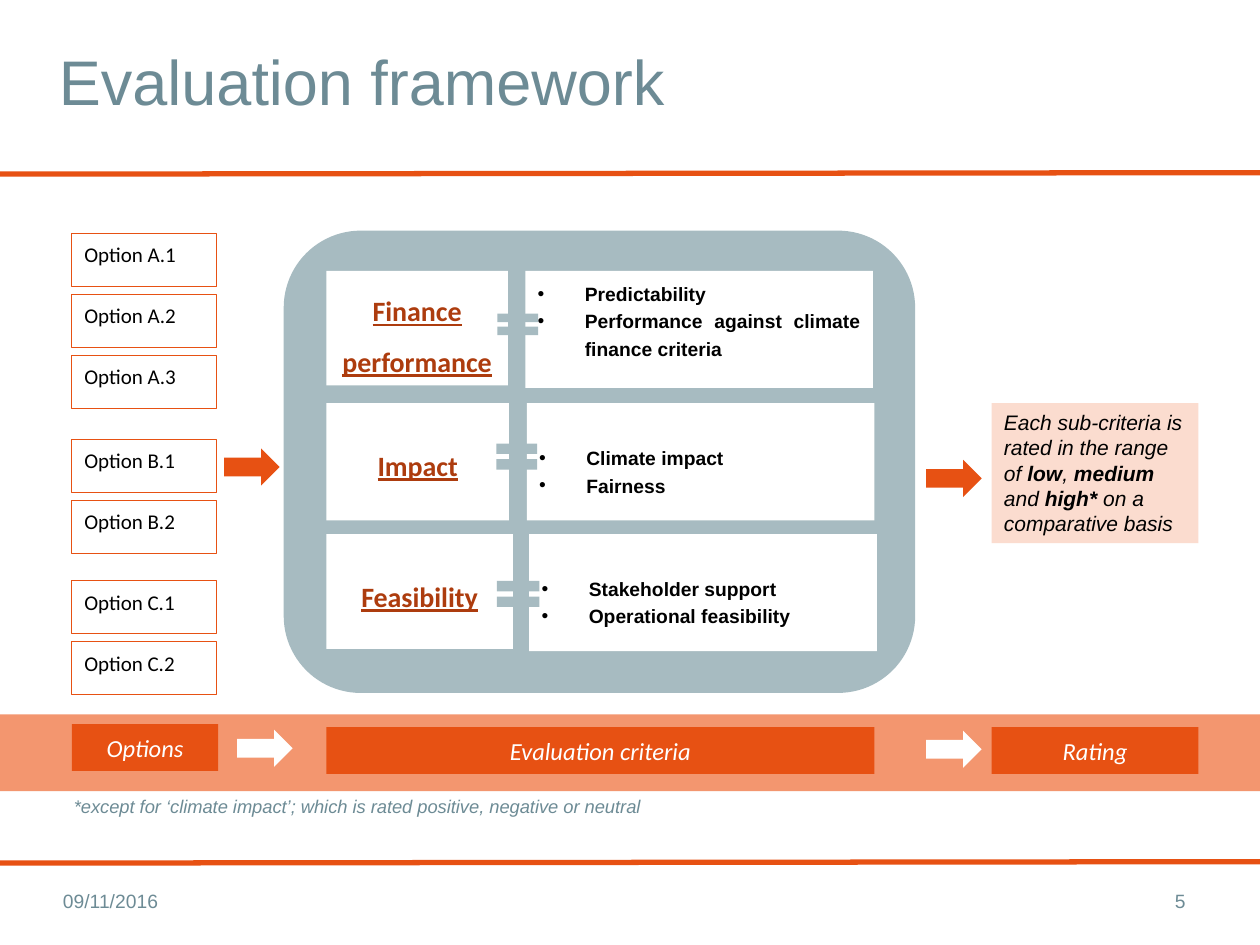
from dataclasses import dataclass
from lxml.etree import SubElement
from pptx import Presentation
from pptx.dml.color import RGBColor
from pptx.enum.shapes import MSO_CONNECTOR, MSO_SHAPE
from pptx.enum.text import MSO_ANCHOR, PP_ALIGN
from pptx.oxml.ns import qn
from pptx.util import Cm, Pt


@dataclass(frozen=True)
class Theme:
    orange: str = "E75113"
    light_orange: str = "F3966F"
    pale_orange: str = "FBDCCF"
    rust: str = "AD3C0E"
    slate: str = "6D8B95"
    panel: str = "A7BBC1"
    white: str = "FFFFFF"
    black: str = "000000"
    heading_font: str = "Arial"
    label_font: str = "Calibri"
    title_size: float = 36
    criterion_size: float = 16
    stage_size: float = 14
    body_size: float = 12
    small_size: float = 11
    note_size: float = 10.5


THEME = Theme()

# Content; all lengths are centimetres
TITLE = "Evaluation framework"
FOOTNOTE = "*except for ‘climate impact’; which is rated positive, negative or neutral"
DATE, PAGE = "09/11/2016", "5"
OPTION_GROUPS = [  # top, labels
    (4.7, ["Option A.1", "Option A.2", "Option A.3"]),
    (8.86, ["Option B.1", "Option B.2"]),
    (11.71, ["Option C.1", "Option C.2"]),
]
CRITERIA = [
    dict(name="Finance performance", spacing=1.5, name_inset=0.13, name_size=(3.66, 2.31),
         items=["Predictability", "Performance against climate finance criteria"],
         first_spacing=1.2, list_left=10.59, list_inset=0.13, top=5.46,
         equal=(9.88, 6.17, 1.12, 0.74)),
    dict(name="Impact", spacing=1.07, name_inset=0.86, name_size=(3.68, 2.36),
         items=["Climate impact", "Fairness"],
         first_spacing=1.5, list_left=10.62, list_inset=0.63, top=8.13,
         equal=(9.86, 8.76, 1.12, 0.89)),
    dict(name="Feasibility", spacing=1.07, name_inset=0.86, name_size=(3.76, 2.31),
         items=["Stakeholder support", "Operational feasibility"],
         first_spacing=1.5, list_left=10.67, list_inset=0.63, top=10.77,
         equal=(9.86, 11.53, 1.17, 0.89)),
]
RATING = [  # text, bold
    ("Each sub-criteria is rated in the range of ", False), ("low", True),
    (", ", False), ("medium ", True), ("and ", False), ("high*", True),
    (" on a comparative basis", False),
]
STAGES = [  # text, left, top, width
    ("Options", 1.45, 14.6, 2.95),
    ("Evaluation criteria", 6.58, 14.66, 11.05),
    ("Rating", 19.99, 14.66, 4.17),
]
FLOW_ARROWS = [(4.52, 9.04), (18.67, 9.27)]
STAGE_ARROWS = [(4.78, 14.71), (18.67, 14.73)]
RULES = [(3.51, 3.48), (17.4, 17.37)]  # left and right height
OPTION_LEFT, OPTION_WIDTH, OPTION_HEIGHT, OPTION_PITCH = 1.45, 2.92, 1.07, 1.23

presentation = Presentation()
presentation.slide_width, presentation.slide_height = Cm(25.4), Cm(19.05)
slide = presentation.slides.add_slide(presentation.slide_layouts[6])


def color(value):
    return RGBColor.from_string(value)


def add_box(kind, left, top, width, height, fill, outline=None):
    shape = slide.shapes.add_shape(kind, Cm(left), Cm(top), Cm(width), Cm(height))
    shape.shadow.inherit = False
    shape.fill.solid()
    shape.fill.fore_color.rgb = color(fill)
    if outline:
        shape.line.color.rgb = color(outline)
        shape.line.width = Pt(0.5)
    else:
        shape.line.fill.background()
    return shape


def prepare_frame(shape, anchor=MSO_ANCHOR.TOP, inset=0.13):
    frame = shape.text_frame
    frame.word_wrap = True
    frame.vertical_anchor = anchor
    frame.margin_top = Cm(inset)
    return frame


def style(paragraph, size, text_color, name, align=PP_ALIGN.LEFT, spacing=1.0,
          bold=False, italic=False, underline=False):
    paragraph.alignment = align
    paragraph.line_spacing = spacing
    font = paragraph.font
    font.size, font.name = Pt(size), name
    font.color.rgb = color(text_color)
    font.bold, font.italic, font.underline = bold, italic, underline


def write(shape, text, *args, anchor=MSO_ANCHOR.TOP, inset=0.13, **options):
    paragraph = prepare_frame(shape, anchor, inset).paragraphs[0]
    paragraph.text = text
    style(paragraph, *args, **options)


def add_label(text, left, top, width, height, size, **options):
    shape = slide.shapes.add_textbox(Cm(left), Cm(top), Cm(width), Cm(height))
    write(shape, text, size, THEME.slate, THEME.heading_font, **options)


def add_bullet(paragraph):
    properties = paragraph._p.get_or_add_pPr()
    properties.set("marL", str(Cm(0.95)))
    properties.set("indent", str(-Cm(0.95)))
    SubElement(properties, qn("a:buFont"), typeface=THEME.heading_font)
    SubElement(properties, qn("a:buChar"), char="•")


def add_arrow(left, top, fill):
    add_box(MSO_SHAPE.RIGHT_ARROW, left, top, 1.12, 0.75, fill)


# Rules, title and footer
for start, end in RULES:
    rule = slide.shapes.add_connector(MSO_CONNECTOR.STRAIGHT, 0, Cm(start), Cm(25.4), Cm(end))
    rule.line.color.rgb = color(THEME.orange)
    rule.line.width = Pt(3)
    SubElement(rule._element.spPr, qn("a:effectLst"))
add_label(TITLE, 0.94, 0.13, 19.79, 3.15, THEME.title_size, anchor=MSO_ANCHOR.MIDDLE, spacing=0.9)
add_label(FOOTNOTE, 1.24, 15.95, 23.37, 0.84, THEME.note_size, italic=True, spacing=0.9)
add_label(PAGE, 17.93, 17.65, 6.22, 1.02, THEME.small_size,
          anchor=MSO_ANCHOR.MIDDLE, align=PP_ALIGN.RIGHT)
add_label(DATE, 1.02, 17.65, 6.45, 1.02, THEME.small_size, anchor=MSO_ANCHOR.MIDDLE)

# Options
for group_top, labels in OPTION_GROUPS:
    for index, label in enumerate(labels):
        option = add_box(MSO_SHAPE.RECTANGLE, OPTION_LEFT, group_top + index * OPTION_PITCH,
                         OPTION_WIDTH, OPTION_HEIGHT, THEME.white, THEME.orange)
        write(option, label, THEME.body_size, THEME.black, THEME.label_font, spacing=1.07)

# Criteria panel
add_box(MSO_SHAPE.ROUNDED_RECTANGLE, 5.72, 4.65, 12.73, 9.32, THEME.panel)
for row in CRITERIA:
    criterion = add_box(MSO_SHAPE.RECTANGLE, 6.58, row["top"], *row["name_size"], THEME.white)
    write(criterion, row["name"], THEME.criterion_size, THEME.rust, THEME.label_font,
          align=PP_ALIGN.CENTER, spacing=row["spacing"], inset=row["name_inset"],
          bold=True, underline=True)
    details = add_box(MSO_SHAPE.RECTANGLE, row["list_left"], row["top"], 7.01, 2.36, THEME.white)
    frame = prepare_frame(details, inset=row["list_inset"])
    for index, item in enumerate(row["items"]):
        paragraph = frame.add_paragraph() if index else frame.paragraphs[0]
        paragraph.text = item
        add_bullet(paragraph)
        style(paragraph, THEME.small_size, THEME.black, THEME.heading_font, PP_ALIGN.JUSTIFY,
              1.2 if index else row["first_spacing"], bold=True)
    add_box(MSO_SHAPE.MATH_EQUAL, *row["equal"], THEME.panel)

# Rating
rating = add_box(MSO_SHAPE.RECTANGLE, 19.99, 8.13, 4.17, 2.82, THEME.pale_orange)
paragraph = prepare_frame(rating).paragraphs[0]
style(paragraph, THEME.body_size, THEME.black, THEME.heading_font, italic=True)
for text, bold in RATING:
    run = paragraph.add_run()
    run.text = text
    run.font.bold = bold

# Stage band and arrows
add_box(MSO_SHAPE.RECTANGLE, 0, 14.4, 25.4, 1.55, THEME.light_orange)
for text, left, top, width in STAGES:
    stage = add_box(MSO_SHAPE.RECTANGLE, left, top, width, 0.94, THEME.orange)
    write(stage, text, THEME.stage_size, THEME.white, THEME.label_font,
          align=PP_ALIGN.CENTER, spacing=1.07, italic=True)
for positions, fill in ((FLOW_ARROWS, THEME.orange), (STAGE_ARROWS, THEME.white)):
    for left, top in positions:
        add_arrow(left, top, fill)

presentation.save("out.pptx")
